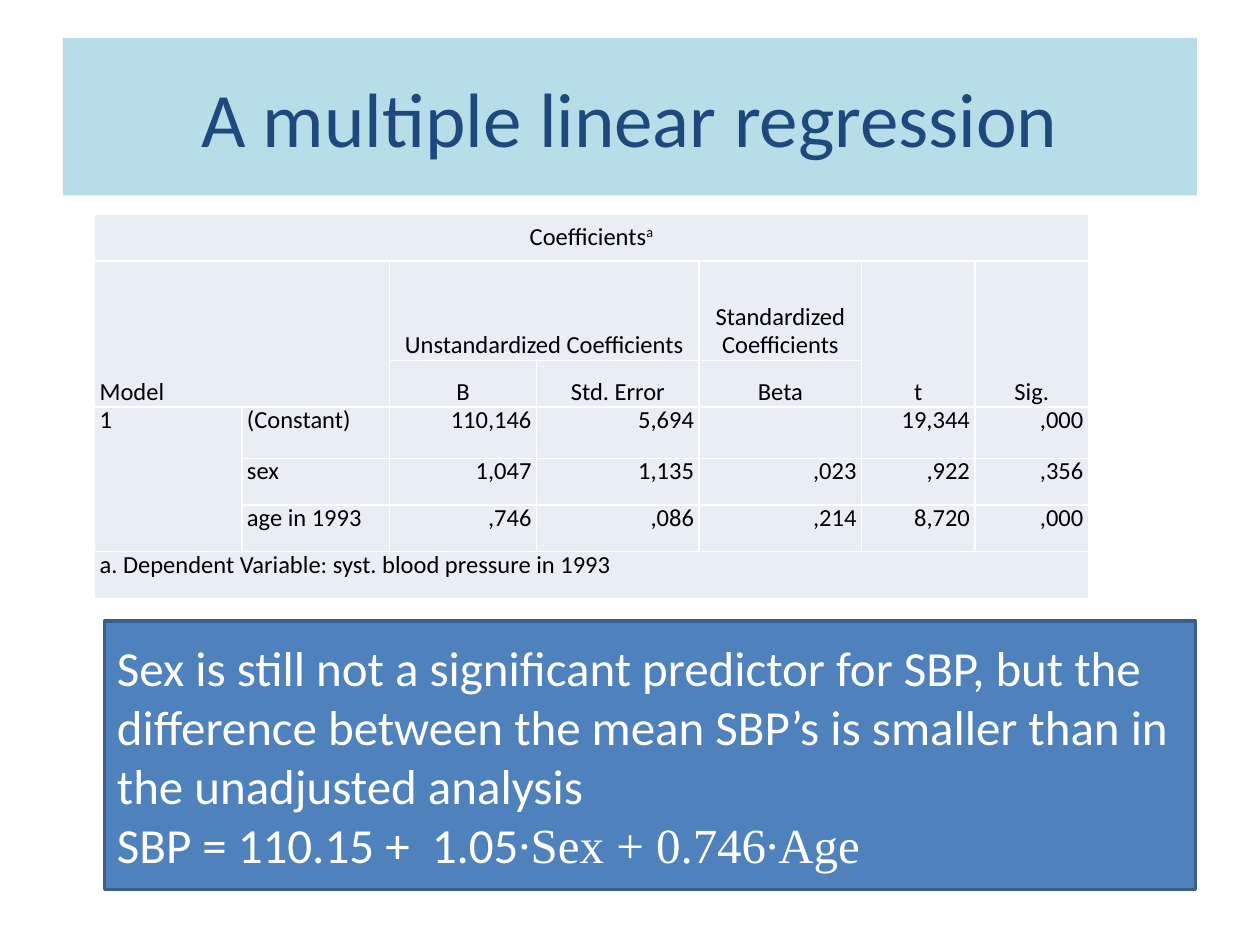
from lxml import etree
from pptx import Presentation
from pptx import util as u
from pptx.dml.color import RGBColor
from pptx.enum import shapes, text
from pptx.oxml import ns

NAVY = RGBColor(0x1F, 0x49, 0x7D)
PALE_TEAL = RGBColor(0xB7, 0xDE, 0xE8)
BLUE = RGBColor(0x4F, 0x81, 0xBD)
DARK_BLUE = RGBColor(0x3A, 0x5F, 0x8C)
CELL_GREY = RGBColor(0xE9, 0xED, 0xF4)
WHITE = RGBColor(0xFF, 0xFF, 0xFF)
BLACK = RGBColor(0, 0, 0)

CELL = u.Inches(0.1)
LEFT, CENTER, RIGHT = text.PP_ALIGN.LEFT, text.PP_ALIGN.CENTER, text.PP_ALIGN.RIGHT

COLUMNS = [11.7, 11.7, 11.7, 12.9, 12.9, 9, 9]
ROWS = [3.7, 7.9, 3.7, 4.1, 3.7, 3.7, 3.7]
SPANS = [(0, 0, 0, 6), (1, 0, 2, 1), (1, 2, 1, 3), (1, 5, 2, 5),
         (1, 6, 2, 6), (3, 0, 5, 0), (6, 0, 6, 6)]
COEFFICIENTS = [
    ["Coefficients", "", "", "", "", "", ""],
    ["Model", "", "Unstandardized Coefficients", "", "Standardized Coefficients", "t", "Sig."],
    ["", "", "B", "Std. Error", "Beta", "", ""],
    ["1", "(Constant)", "110,146", "5,694", "", "19,344", ",000"],
    ["", "sex", "1,047", "1,135", ",023", ",922", ",356"],
    ["", "age in 1993", ",746", ",086", ",214", "8,720", ",000"],
    ["a. Dependent Variable: syst. blood pressure in 1993", "", "", "", "", "", ""],
]


def grid(*box):
    return [u.Emu(int(n * CELL)) for n in box]


def set_font(font, size, color, name="Calibri"):
    font.size, font.name = u.Pt(size), name
    font.color.rgb = color


def add_panel(s, box, fill):
    sp = s.shapes.add_shape(shapes.MSO_SHAPE.RECTANGLE, *grid(*box))
    sp.shadow.inherit = False
    sp.fill.solid()
    sp.fill.fore_color.rgb = fill
    sp.line.fill.background()
    sp.text_frame.word_wrap = True
    sp.text_frame.vertical_anchor = text.MSO_ANCHOR.MIDDLE
    return sp


def add_title(s, box):
    p = add_panel(s, box, PALE_TEAL).text_frame.paragraphs[0]
    p.text = "A multiple linear regression"
    p.alignment = CENTER
    set_font(p.font, 44, NAVY)


def add_borders(cell):
    tc_pr = cell._tc.get_or_add_tcPr()
    for side in ("lnL", "lnR", "lnT", "lnB"):
        ln = etree.SubElement(tc_pr, ns.qn(f"a:{side}"), w=str(u.Pt(1)))
        fill = etree.SubElement(ln, ns.qn("a:solidFill"))
        etree.SubElement(fill, ns.qn("a:srgbClr"), val=str(WHITE))


def style_cell(cell, row, col):
    add_borders(cell)
    cell.fill.solid()
    cell.fill.fore_color.rgb = CELL_GREY
    cell.margin_left = cell.margin_right = cell.margin_top = cell.margin_bottom = 0
    if row == 0:
        cell.vertical_anchor = text.MSO_ANCHOR.MIDDLE
    elif row < 3:
        cell.vertical_anchor = text.MSO_ANCHOR.BOTTOM
    p = cell.text_frame.paragraphs[0]
    if row == 0 or (row < 3 and col > 1):
        p.alignment = CENTER
    else:
        p.alignment = RIGHT if col > 1 else LEFT
    p.line_spacing = u.Pt(16)
    for margin in ("marL", "marR"):
        p._p.get_or_add_pPr().set(margin, str(u.Inches(0.04)))
    set_font(p.font, 14, BLACK)


def add_coefficients(s, box):
    table = s.shapes.add_table(len(ROWS), len(COLUMNS), *grid(*box)).table
    table.first_row = table.horz_banding = False
    for column, width in zip(table.columns, grid(*COLUMNS)):
        column.width = width
    for row, height in zip(table.rows, grid(*ROWS)):
        row.height = height
    for i, values in enumerate(COEFFICIENTS):
        for j, value in enumerate(values):
            cell = table.cell(i, j)
            cell.text = value
            style_cell(cell, i, j)
    for top, left, bottom, right in SPANS:
        table.cell(top, left).merge(table.cell(bottom, right))
    r = table.cell(0, 0).text_frame.paragraphs[0].add_run()
    r.text = "a"
    r.font._element.set("baseline", "30000")


def add_conclusion(s, box):
    sp = add_panel(s, box, BLUE)
    sp.line.color.rgb = DARK_BLUE
    sp.line.width = u.Pt(2)
    tf = sp.text_frame
    p = tf.paragraphs[0]
    p.text = ("Sex is still not a significant predictor for SBP, but the difference "
              "between the mean SBP’s is smaller than in the unadjusted analysis")
    p.alignment = LEFT
    set_font(p.font, 28, WHITE)
    p = tf.add_paragraph()
    p.alignment = LEFT
    for part, name in (("SBP = 110.15 +  1.05", "Calibri"),
                       ("∙Sex + 0.746∙Age", "Times New Roman")):
        r = p.add_run()
        r.text = part
        set_font(r.font, 28, WHITE, name)


def main():
    prs = Presentation()
    prs.slide_width, prs.slide_height = grid(100, 75)
    s = prs.slides.add_slide(prs.slide_layouts[6])
    add_title(s, (5, 3, 90, 12.5))
    add_coefficients(s, (7.5, 17, sum(COLUMNS), sum(ROWS)))
    add_conclusion(s, (8.3, 49.3, 86.6, 21.3))
    prs.save("out.pptx")


if __name__ == "__main__":
    main()
